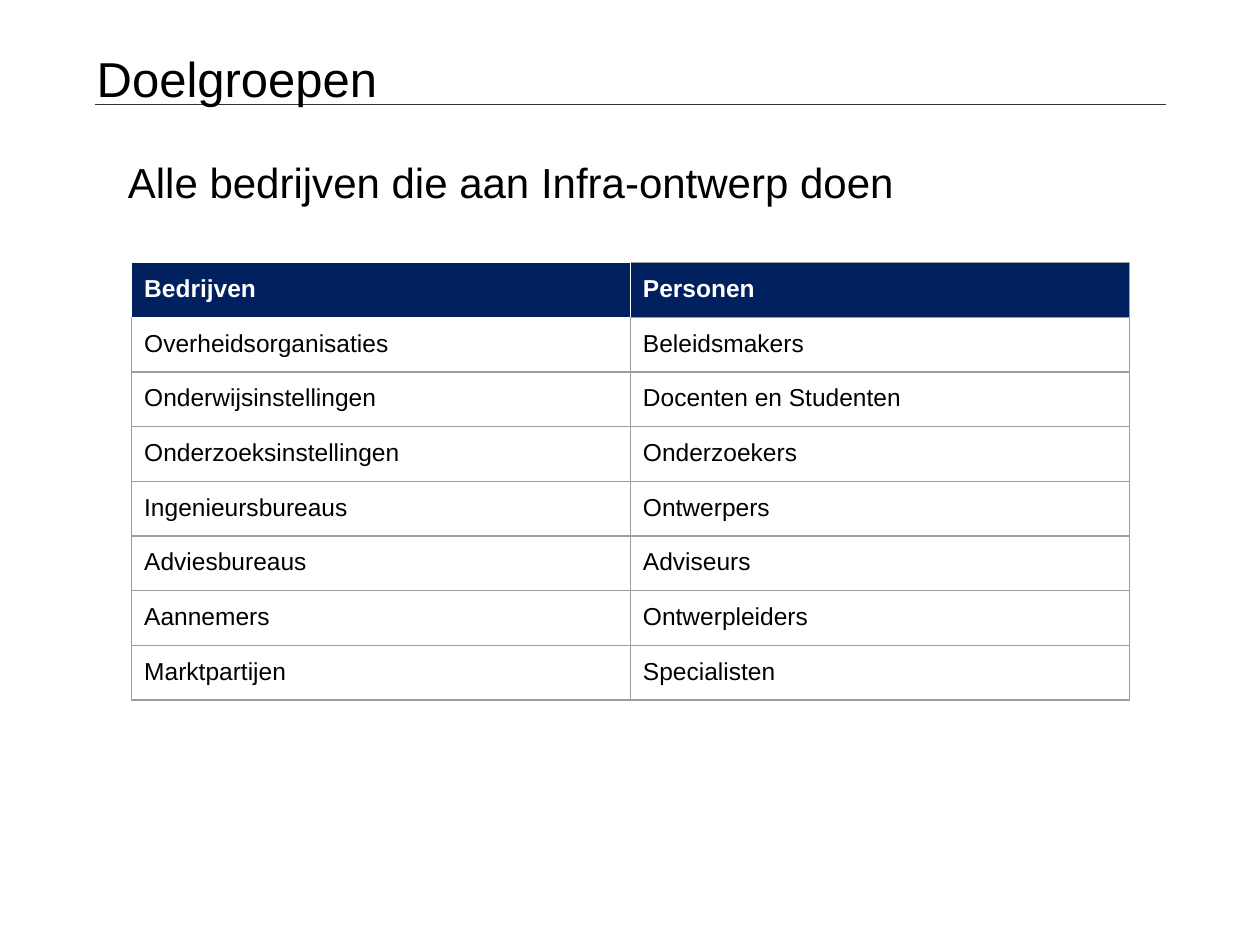
from typing import NamedTuple

from lxml.etree import SubElement
from pptx import Presentation
from pptx.dml.color import RGBColor
from pptx.enum.shapes import MSO_CONNECTOR
from pptx.oxml.ns import qn
from pptx.slide import Slide
from pptx.table import _Cell as Cell
from pptx.text.text import _Paragraph as Para
from pptx.util import Pt

BLACK = RGBColor(0x00, 0x00, 0x00)
WHITE = RGBColor(0xFF, 0xFF, 0xFF)
NAVY = RGBColor(0x00, 0x20, 0x60)
GREY = RGBColor(0x9E, 0x9E, 0x9E)
DARK = RGBColor(0x33, 0x33, 0x33)

FONT = "Arial"
INSET = Pt(7.2)
ROW_H = Pt(30.1)
COL_W = Pt(285)


class Label(NamedTuple):
    text: str
    left: float
    top: float
    width: float
    height: float
    size: float
    margin: float = 0
    indent: float = 0


class Pair(NamedTuple):
    firm: str
    person: str


LABELS = [
    Label("Doelgroepen", 48.2, 24.2, 510.5, 34.6, 28),
    Label("Alle bedrijven die aan Infra-ontwerp doen",
          54, 85.7, 612, 394, 24, 27, -15),
]

PAIRS = [
    Pair("Bedrijven", "Personen"),
    Pair("Overheidsorganisaties", "Beleidsmakers"),
    Pair("Onderwijsinstellingen", "Docenten en Studenten"),
    Pair("Onderzoeksinstellingen", "Onderzoekers"),
    Pair("Ingenieursbureaus", "Ontwerpers"),
    Pair("Adviesbureaus", "Adviseurs"),
    Pair("Aannemers", "Ontwerpleiders"),
    Pair("Marktpartijen", "Specialisten"),
]


def add_run(para: Para, text: str, size: float, color: RGBColor,
            bold: bool = False) -> None:
    run = para.add_run()
    run.text = text
    run.font.name = FONT
    run.font.size = Pt(size)
    run.font.bold = bold
    run.font.color.rgb = color


def add_label(slide: Slide, label: Label) -> None:
    box = slide.shapes.add_textbox(Pt(label.left), Pt(label.top),
                                   Pt(label.width), Pt(label.height))
    frame = box.text_frame
    frame.word_wrap = True
    para = frame.paragraphs[0]
    if label.margin:
        props = para._p.get_or_add_pPr()
        props.set("marL", str(Pt(label.margin)))
        props.set("indent", str(Pt(label.indent)))
    add_run(para, label.text, label.size, BLACK)


def add_rule(slide: Slide) -> None:
    """Draw the thin line under the title."""
    rule = slide.shapes.add_connector(MSO_CONNECTOR.STRAIGHT,
                                      Pt(54), Pt(59.8), Pt(666), Pt(59.8))
    rule.line.color.rgb = DARK
    rule.line.width = Pt(0.75)
    SubElement(rule._element.spPr, qn("a:effectLst"))


def set_edges(cell: Cell, white: str) -> None:
    """Border a cell in grey, with the sides named in white drawn white."""
    props = cell._tc.get_or_add_tcPr()
    for side in "LRTB":
        edge = SubElement(props, qn(f"a:ln{side}"), w=str(Pt(0.75)))
        fill = SubElement(edge, qn("a:solidFill"))
        color = WHITE if side in white else GREY
        SubElement(fill, qn("a:srgbClr"), val=str(color))


def white_sides(row: int, col: int) -> str:
    return {(0, 0): "LRTB", (0, 1): "L", (1, 0): "T"}.get((row, col), "")


def fill_cell(cell: Cell, text: str, row: int, col: int) -> None:
    head = row == 0
    cell.margin_left = cell.margin_right = INSET
    cell.margin_top = cell.margin_bottom = INSET
    set_edges(cell, white_sides(row, col))
    if head:
        cell.fill.solid()
        cell.fill.fore_color.rgb = NAVY
    else:
        cell.fill.background()
    add_run(cell.text_frame.paragraphs[0], text, 14,
            WHITE if head else BLACK, head)


def add_groups(slide: Slide) -> None:
    """Add the table of companies and the people in them."""
    count = len(PAIRS)
    table = slide.shapes.add_table(count, 2, Pt(75.2), Pt(150.1),
                                   COL_W * 2, ROW_H * count).table
    table.horz_banding = False
    for col in table.columns:
        col.width = COL_W
    for row, pair in enumerate(PAIRS):
        table.rows[row].height = ROW_H
        for col, text in enumerate(pair):
            fill_cell(table.cell(row, col), text, row, col)


def main() -> None:
    deck = Presentation()
    deck.slide_width, deck.slide_height = Pt(720), Pt(540)
    slide = deck.slides.add_slide(deck.slide_layouts[6])
    add_rule(slide)
    for label in LABELS:
        add_label(slide, label)
    add_groups(slide)
    deck.save("out.pptx")


if __name__ == "__main__":
    main()
